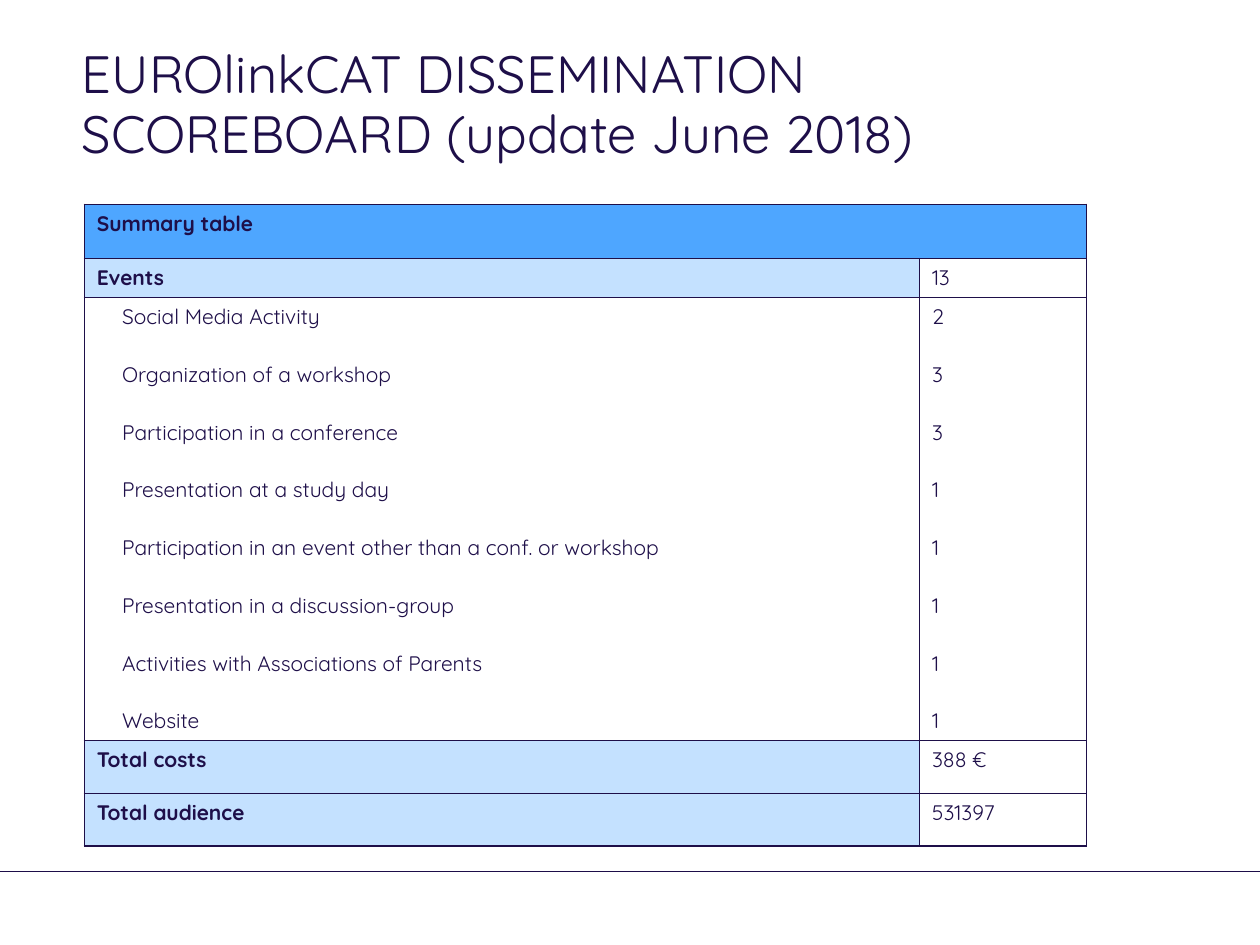
from pptx import Presentation
from pptx.dml.color import RGBColor
from pptx.enum.shapes import MSO_CONNECTOR
from pptx.enum.text import MSO_ANCHOR, MSO_AUTO_SIZE, PP_ALIGN
from pptx.oxml.ns import qn
from pptx.util import Pt
from lxml.etree import SubElement

COLORS = {"ink": "1E0F49", "rule": "1D0D49", "header": "4EA6FF",
          "label": "C4E1FF", "white": "FFFFFF"}
FONT = "Quicksand"
EVENTS = [
    ("Social Media Activity", "2"),
    ("Organization of a workshop", "3"),
    ("Participation in a conference", "3"),
    ("Presentation at a study day", "1"),
    ("Participation in an event other than a conf. or workshop", "1"),
    ("Presentation in a discussion-group", "1"),
    ("Activities with Associations of Parents", "1"),
    ("Website", "1"),
]
names, counts = zip(*EVENTS)
ROWS = [
    (31, "Summary table", ""),
    (22, "Events", "13"),
    (253, "\n".join(names), "\n".join(counts)),
    (30.2, "Total costs", "388 €"),
    (30.2, "Total audience", "531397"),
]
EVENT_ROW = 2


def style_font(font, size, bold=False):
    font.name = FONT
    font.size = Pt(size)
    font.bold = bold
    font.color.rgb = RGBColor.from_string(COLORS["ink"])


def add_borders(cell):
    properties = cell._tc.get_or_add_tcPr()
    for side in ("a:lnL", "a:lnR", "a:lnT", "a:lnB"):
        border = SubElement(properties, qn(side), w=str(Pt(1)))
        fill = SubElement(border, qn("a:solidFill"))
        SubElement(fill, qn("a:srgbClr"), val=COLORS["ink"])


presentation = Presentation()
presentation.slide_width = Pt(720)
presentation.slide_height = Pt(540)
slide = presentation.slides.add_slide(presentation.slide_layouts[5])

rule = slide.shapes.add_connector(MSO_CONNECTOR.STRAIGHT, Pt(0), Pt(498), Pt(720), Pt(498))
rule.line.width = Pt(0.25)
rule.line.color.rgb = RGBColor.from_string(COLORS["rule"])
SubElement(rule._element.spPr, qn("a:effectLst"))

title = slide.shapes.title
title.left, title.top, title.width, title.height = Pt(39.6), Pt(20.9), Pt(594.7), Pt(87.8)
title_frame = title.text_frame
title_frame.text = "EUROlinkCAT DISSEMINATION SCOREBOARD (update June 2018)"
title_frame.word_wrap = True
title_frame.auto_size = MSO_AUTO_SIZE.NONE
title_frame.vertical_anchor = MSO_ANCHOR.TOP
title_frame.margin_top = Pt(5.4)
paragraph = title_frame.paragraphs[0]
paragraph.alignment = PP_ALIGN.LEFT
paragraph.line_spacing = 0.95
style_font(paragraph.runs[0].font, 30)

table_height = sum(row[0] for row in ROWS)
table = slide.shapes.add_table(len(ROWS), 2, Pt(48.2), Pt(116.8), Pt(572.8), Pt(table_height)).table
table.columns[0].width = Pt(477.2)
table.columns[1].width = Pt(95.6)

for row_index, (height, *texts) in enumerate(ROWS):
    table.rows[row_index].height = Pt(height)
    for column_index, text in enumerate(texts):
        cell = table.cell(row_index, column_index)
        is_label = column_index == 0 and row_index != EVENT_ROW
        fill_name = "header" if row_index == 0 else "label" if is_label else "white"
        add_borders(cell)
        cell.fill.solid()
        cell.fill.fore_color.rgb = RGBColor.from_string(COLORS[fill_name])
        cell.vertical_anchor = MSO_ANCHOR.TOP
        cell.text_frame.text = text
        for index, paragraph in enumerate(cell.text_frame.paragraphs):
            if row_index == EVENT_ROW:
                paragraph.space_before = Pt(12 if index else 0)
                paragraph.space_after = Pt(6)
                if column_index == 0:
                    properties = paragraph._p.get_or_add_pPr()
                    properties.set("marL", str(Pt(14.4)))
                    properties.set("indent", "0")
            style_font(paragraph.font, 12, is_label)
            for run in paragraph.runs:
                style_font(run.font, 12, is_label)

table.cell(0, 0).merge(table.cell(0, 1))

presentation.save("out.pptx")
